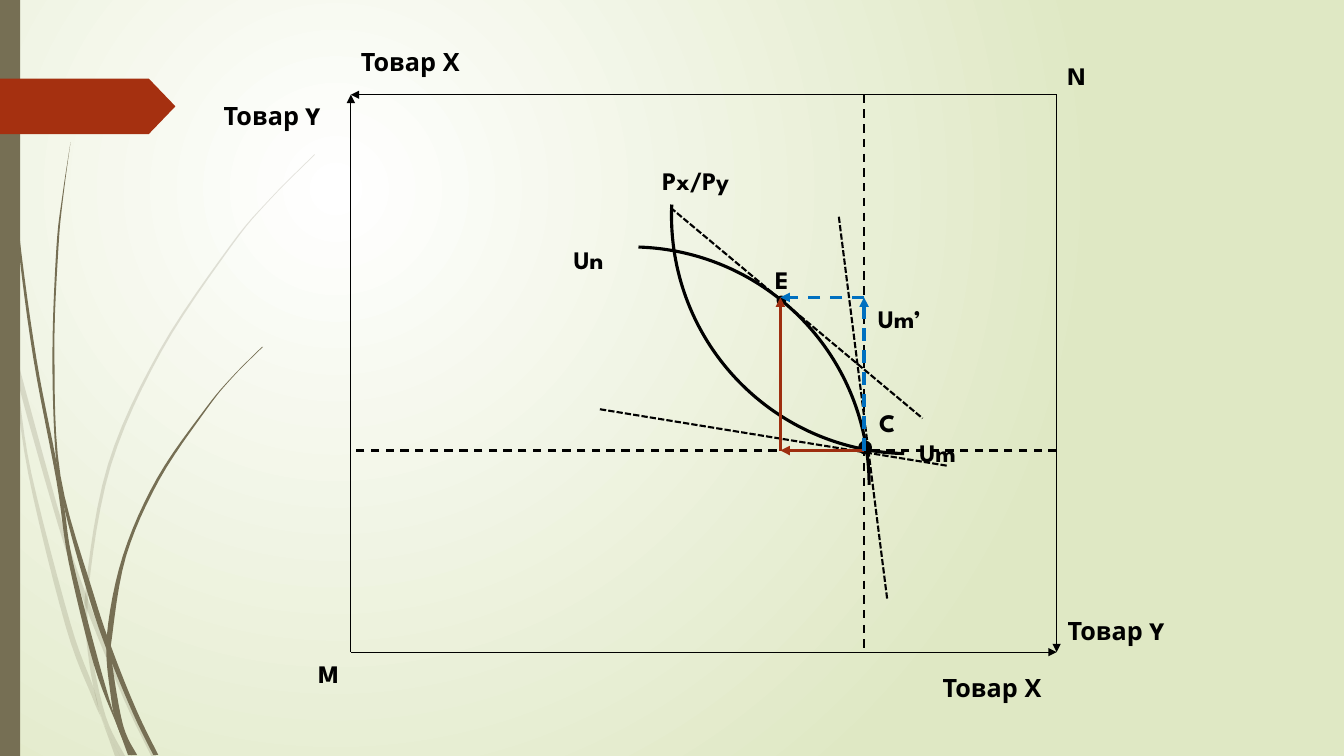
from lxml import etree
from pptx import Presentation
from pptx import util as u
from pptx.dml.color import RGBColor
from pptx.enum import dml, shapes, text
from pptx.oxml.ns import qn

WIDE, HIGH = 13.33, 7.5
LEFT, RIGHT, TOP, BASE = 3.48, 10.48, 0.94, 6.47
C_X, C_Y, E_X, E_Y = 8.57, 4.47, 7.74, 2.95
FONT = "League Spartan"
BLACK, RED, BLUE, STEM, TAG = "000000", "9E2E0F", "0070C0", "766F54", "A53010"
DASH, DOTS = dml.MSO_LINE.DASH, dml.MSO_LINE.SQUARE_DOT
SYSDASH = "sysDash"

FAINT = [
    ([(0, 2.82), (0.11, 3.5), (0.17, 3.76), (0.31, 4.69), (0.7, 6.19),
      (0.93, 6.83), (1.01, 7.14), (1.19, 7.5)],
     [(1.14, 7.5), (1.01, 7.14), (0.92, 6.93), (0.65, 6.21), (0.28, 4.7),
      (0.11, 3.5), (0, 2.99)]),
    ([(0.14, 3.45), (0.17, 3.76), (0.58, 5.22), (0.84, 5.99), (1.23, 6.94),
      (1.5, 7.5)],
     [(1.55, 7.5), (1.27, 6.92), (0.92, 6.07), (0.62, 5.2), (0.14, 3.45)]),
    ([(3.12, 1.53), (2.68, 1.97), (2.28, 2.44), (1.58, 3.48), (1.07, 4.61),
      (0.85, 5.84), (0.87, 6.46), (0.99, 7.07), (1.19, 7.5)],
     [(1.24, 7.5), (1.05, 7.11), (0.91, 6.46), (0.88, 5.84), (1.1, 4.62),
      (1.6, 3.49), (2.29, 2.45), (2.68, 1.98), (3.12, 1.54)]),
]
DARK = [
    ([(0.03, 0), (0.04, 0.48), (0.07, 1.1), (0.17, 2.33), (0.33, 3.55),
      (0.56, 4.77), (0.68, 5.57), (0.93, 6.59), (1.17, 7.22), (1.27, 7.49)],
     [(1.31, 7.49), (1.16, 7.17), (0.98, 6.57), (0.72, 5.56), (0.64, 5.05),
      (0.55, 4.53), (0.36, 3.55), (0.19, 2.32), (0.08, 1.09), (0.04, 0)]),
    ([(0.7, 1.41), (0.62, 1.93), (0.56, 2.45), (0.52, 3.49), (0.55, 4.49),
      (0.64, 5.05), (0.88, 5.92), (1.06, 6.45), (1.32, 7.08), (1.52, 7.49)],
     [(1.57, 7.49), (1.36, 7.06), (1.13, 6.49), (0.93, 5.9), (0.6, 4.72),
      (0.54, 3.49), (0.58, 2.45), (0.63, 1.93), (0.7, 1.41)]),
    ([(2.6, 3.44), (2.31, 3.73), (2.04, 4.05), (1.56, 4.74), (1.22, 5.51),
      (1.06, 6.31), (1.1, 6.91), (1.17, 7.22), (1.3, 7.49)],
     [(1.36, 7.49), (1.22, 7.19), (1.11, 6.56), (1.11, 6.33), (1.25, 5.52),
      (1.58, 4.76), (2.05, 4.06), (2.31, 3.74), (2.61, 3.44)]),
]
LABELS = [
    ("M", 3.06, 6.48, 0.42), ("N", 10.49, 0.55, 0.42),
    ("Товар Х", 9.25, 6.62, 1.24), ("Товар Х", 3.48, 0.41, 1.24),
    ("Товар Y", 2.12, 0.95, 1.24), ("Товар Y", 10.49, 6.06, 1.24),
    ("Um", 9.02, 4.29, 0.74), ("Un", 5.59, 2.37, 0.74),
    ("C", 8.62, 3.99, 0.74), ("Um’", 8.61, 2.96, 0.74),
    ("Px/Py", 6.47, 1.59, 1.02), ("E", 7.59, 2.57, 0.74),
]


def tint(color, code):
    """Set a colour format from a hex string."""
    color.rgb = RGBColor.from_string(code)


def paint(shape, code):
    """Fill a shape flat, without line or shadow."""
    shape.shadow.inherit = False
    shape.fill.solid()
    tint(shape.fill.fore_color, code)
    shape.line.fill.background()


def ink(line, code, width, dash=None):
    """Set the colour, width and dash of a line."""
    tint(line.color, code)
    line.width = u.Pt(width)
    if dash:
        line.dash_style = dash


def backdrop(slide):
    """Fill the background with a round gradient."""
    fill = slide.background.fill
    fill.gradient()
    for stop, code, place in zip(fill.gradient_stops, ("FFFFFF", "DFE8C4"), (0, 1)):
        tint(stop.color, code)
        stop.position = place
    grad = slide.element.find(".//" + qn("a:gradFill"))
    grad.remove(grad.find(qn("a:lin")))
    round_ = etree.SubElement(grad, qn("a:path"), path="circle")
    etree.SubElement(round_, qn("a:fillToRect"),
                     l="50000", t="50000", r="100000", b="100000")


def smooth(knots, steps=6):
    """Return points on a smooth curve through the knots."""
    ends = [knots[0], *knots, knots[-1]]
    curve = []
    for a, b, c, d in zip(ends, ends[1:], ends[2:], ends[3:]):
        for t in (n / steps for n in range(steps)):
            curve.append(tuple(
                u.Inches(q + t * (r - p) / 2 + t * t * (2 * p - 5 * q + 4 * r - s) / 2
                         + t ** 3 * (3 * q - p - 3 * r + s) / 2)
                for p, q, r, s in zip(a, b, c, d)))
    return curve + [tuple(u.Inches(v) for v in knots[-1])]


def blade(slide, down, back, alpha=None):
    """Draw a blade of grass between two edges."""
    rim = smooth(down) + smooth(back)
    pen = slide.shapes.build_freeform(*rim[0], scale=1.0)
    pen.add_line_segments(rim[1:], close=True)
    shape = pen.convert_to_shape()
    paint(shape, STEM)
    if alpha:
        tone = shape.fill._xPr.find(".//" + qn("a:srgbClr"))
        etree.SubElement(tone, qn("a:alpha"), val=str(alpha * 1000))


def form(slide, kind, *box):
    """Add a preset shape without shadow."""
    shape = slide.shapes.add_shape(kind, *map(u.Inches, box))
    shape.shadow.inherit = False
    return shape


def arc(slide, x, y, start, turn=0):
    """Draw an indifference curve."""
    shape = form(slide, shapes.MSO_SHAPE.ARC, x, y, 4.72, 4.72)
    shape.adjustments[0] = start
    shape.adjustments[1] = 0
    shape.rotation = turn
    shape.fill.background()
    ink(shape.line, BLACK, 2.25)


def dot(slide, x, y, size):
    """Mark a point by its centre."""
    shape = form(slide, shapes.MSO_SHAPE.OVAL, x - size / 2, y - size / 2, size, size)
    paint(shape, BLACK)
    ink(shape.line, BLACK, 1.25)


def line(slide, ends, code=BLACK, width=0.75, dash=None, head=False):
    """Draw a straight line, with an arrowhead if asked."""
    link = slide.shapes.add_connector(shapes.MSO_CONNECTOR.STRAIGHT,
                                      *map(u.Inches, ends))
    ink(link.line, code, width, dash)
    props = link.element.spPr
    if head:
        etree.SubElement(props.find(qn("a:ln")), qn("a:tailEnd"), type="triangle")
    etree.SubElement(props, qn("a:effectLst"))


def label(slide, words, x, y, width):
    """Add a bold label."""
    frame = slide.shapes.add_textbox(*map(u.Inches, (x, y, width, 0.4))).text_frame
    frame.word_wrap = True
    frame.auto_size = text.MSO_AUTO_SIZE.SHAPE_TO_FIT_TEXT
    frame.text = words
    font = frame.paragraphs[0].runs[0].font
    font.name, font.size, font.bold = FONT, u.Pt(18), True
    tint(font.color, BLACK)


def decor(slide):
    """Draw the grass, the side bar and the tag."""
    for down, back in FAINT:
        blade(slide, down, back, 20)
    for down, back in DARK:
        blade(slide, down, back)
    paint(form(slide, shapes.MSO_SHAPE.RECTANGLE, 0, 0, 0.2, HIGH), STEM)
    tag = form(slide, shapes.MSO_SHAPE.PENTAGON, 0, 0.78, 1.74, 0.55)
    tag.adjustments[0] = 0.48
    paint(tag, TAG)


def main():
    """Build the slide and save it."""
    deck = Presentation()
    deck.slide_width, deck.slide_height = u.Inches(WIDE), u.Inches(HIGH)
    slide = deck.slides.add_slide(deck.slide_layouts[6])
    backdrop(slide)
    decor(slide)
    for ends in ((RIGHT, TOP, RIGHT, BASE), (LEFT, BASE, LEFT, TOP),
                 (LEFT, BASE, RIGHT, BASE), (RIGHT, TOP, LEFT, TOP)):
        line(slide, ends, head=True)
    arc(slide, 3.9, 2.45, 163.06)
    arc(slide, 6.66, -0.22, 161.14, 182.7)
    dot(slide, 8.58, 4.44, 0.12)
    dot(slide, 7.75, 2.98, 0.08)
    for ends in ((8.32, 2.15, 8.8, 5.95), (5.95, 4.06, 9.39, 4.62),
                 (6.65, 2.06, 9.15, 4.15)):
        line(slide, ends, width=1.5, dash=DOTS)
    for ends in ((C_X, TOP, C_X, BASE), (RIGHT, C_Y, LEFT, C_Y)):
        line(slide, ends, width=1.5, dash=DASH)
    for ends, code, dash in (((C_X, C_Y, E_X, C_Y), RED, None),
                             ((C_X, E_Y, E_X, E_Y), BLUE, DASH),
                             ((E_X, C_Y, E_X, E_Y), RED, None),
                             ((C_X, C_Y, C_X, E_Y), BLUE, DASH)):
        line(slide, ends, code, 2.25, dash, True)
    for item in LABELS:
        label(slide, *item)
    for mark in slide.element.iter(qn("a:prstDash")):
        if mark.get("val") == "sysDot":
            mark.set("val", SYSDASH)
    deck.save("out.pptx")


if __name__ == "__main__":
    main()
